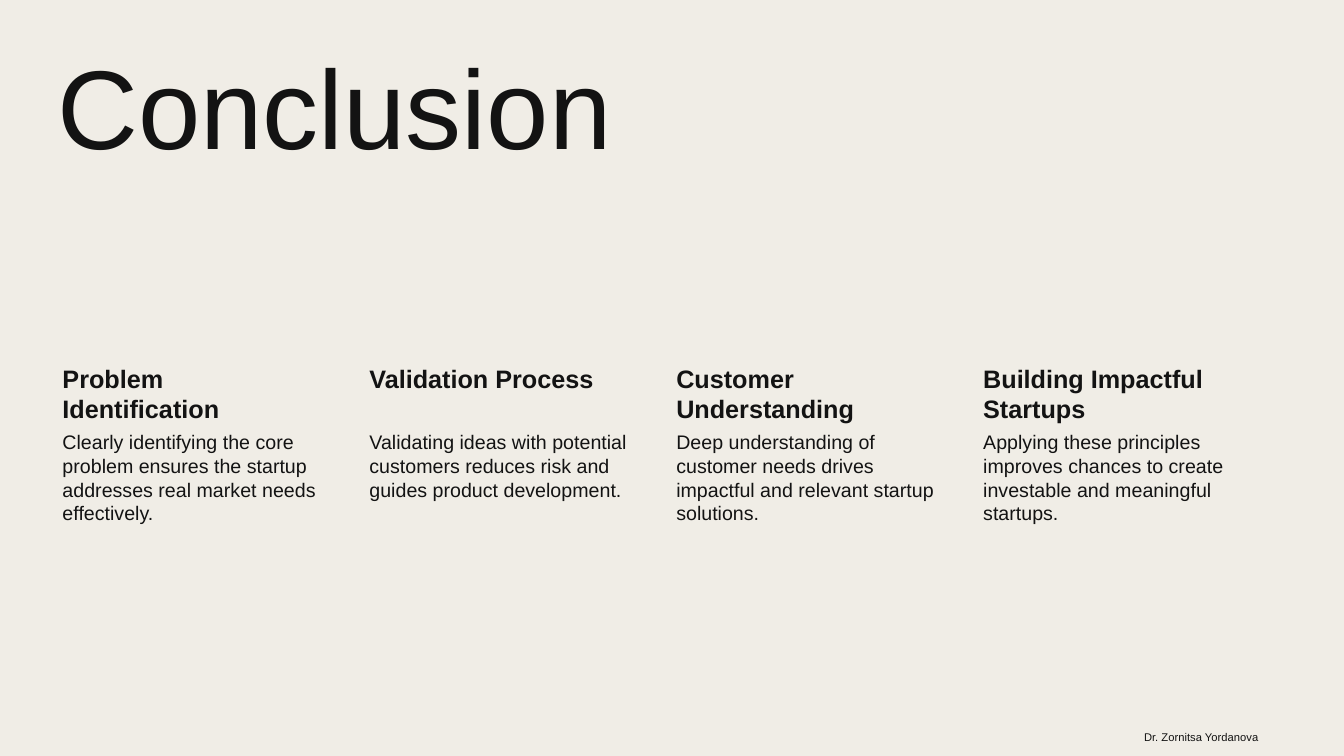
import pptx
import pptx.dml.color
import pptx.enum.text
import pptx.util
from pptx.util import Inches

INK = pptx.dml.color.RGBColor(0x13, 0x13, 0x13)
PAPER = pptx.dml.color.RGBColor(0xF0, 0xED, 0xE6)
ALIGN = pptx.enum.text.PP_ALIGN
ANCHOR = pptx.enum.text.MSO_ANCHOR

TAKEAWAYS = [
    ("Problem Identification",
     "Clearly identifying the core problem ensures the startup addresses real market needs effectively."),
    ("Validation Process",
     "Validating ideas with potential customers reduces risk and guides product development."),
    ("Customer Understanding",
     "Deep understanding of customer needs drives impactful and relevant startup solutions."),
    ("Building Impactful Startups",
     "Applying these principles improves chances to create investable and meaningful startups."),
]
LEFT = 0.47
COLUMN_STEP = 3.044
COLUMN_WIDTH = 2.77


def set_attributes(target, values):
    for name, value in values.items():
        setattr(target, name, value)


def add_text(slide, text, box, size, bold=False, frame_format=None, paragraph_format=None):
    shape = slide.shapes.add_textbox(*(Inches(length) for length in box))
    frame = shape.text_frame
    set_attributes(frame, {"word_wrap": True, **(frame_format or {})})
    paragraph = frame.paragraphs[0]
    set_attributes(paragraph, paragraph_format or {})
    run = paragraph.add_run()
    run.text = text
    set_attributes(run.font, {"name": "Arial", "size": pptx.util.Pt(size), "bold": bold})
    run.font.color.rgb = INK


def column_insets(edge):
    return {
        "margin_left": Inches(0.15),
        "margin_top": Inches(edge),
        "margin_right": Inches(edge),
        "margin_bottom": Inches(edge),
    }


def add_takeaway(slide, column, heading, detail):
    left = LEFT + column * COLUMN_STEP
    add_text(slide, heading, (left, 3.57, COLUMN_WIDTH, 0.68), 18, True, column_insets(0.03))
    add_text(slide, detail, (left, 4.25, COLUMN_WIDTH, 2.4), 14, False, column_insets(0.02))


def main():
    presentation = pptx.Presentation()
    set_attributes(presentation, {"slide_width": Inches(13.33), "slide_height": Inches(7.5)})
    slide = presentation.slides.add_slide(presentation.slide_layouts[6])
    slide.background.fill.solid()
    slide.background.fill.fore_color.rgb = PAPER
    add_text(slide, "Conclusion", (LEFT, 0.47, 11.91, 1.78), 80,
             paragraph_format={"line_spacing": 0.9})
    for column, (heading, detail) in enumerate(TAKEAWAYS):
        add_takeaway(slide, column, heading, detail)
    add_text(slide, "Dr. Zornitsa Yordanova", (9.69, 7.13, 2.89, 0.37), 8,
             frame_format={"vertical_anchor": ANCHOR.MIDDLE},
             paragraph_format={"alignment": ALIGN.RIGHT})
    presentation.save("out.pptx")


if __name__ == "__main__":
    main()
